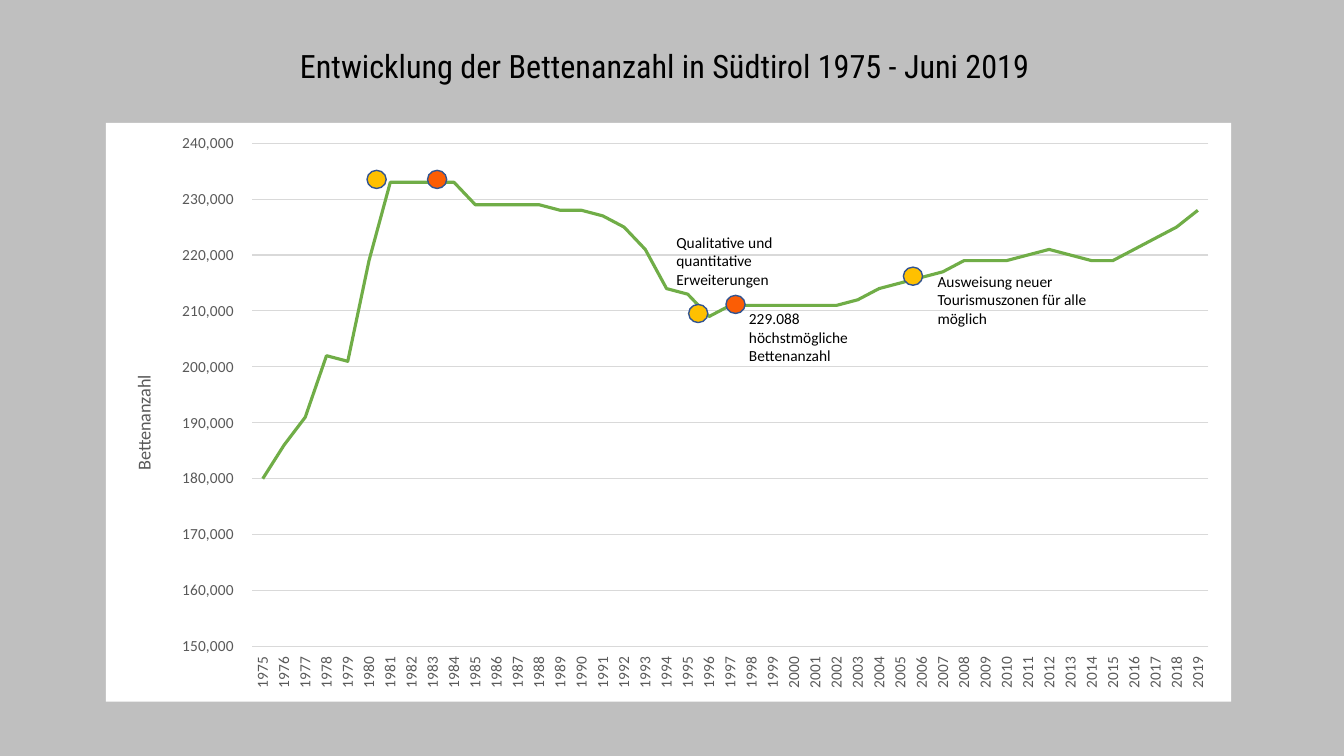
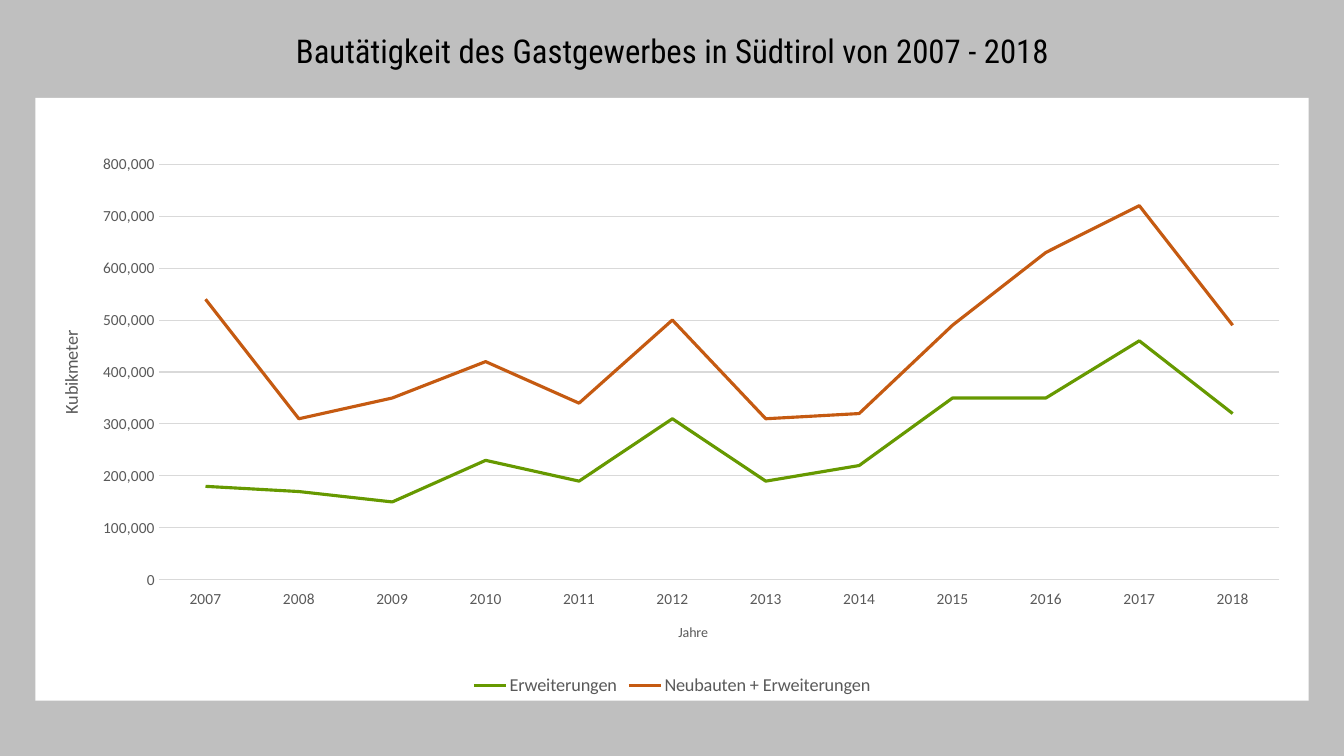
"""Build two slides with line charts on tourism beds and building activity."""
from lxml import etree
from pptx import Presentation
from pptx.chart.data import CategoryChartData
from pptx.dml.color import RGBColor
from pptx.enum.chart import XL_CHART_TYPE as ChartType, XL_LEGEND_POSITION as LegendPosition
from pptx.enum.chart import XL_TICK_LABEL_POSITION as LabelPosition, XL_TICK_MARK as TickMark
from pptx.enum.shapes import MSO_SHAPE as Shape
from pptx.enum.text import MSO_ANCHOR as Anchor, MSO_AUTO_SIZE as AutoSize, PP_ALIGN as Align
from pptx.oxml import parse_xml
from pptx.oxml.ns import nsdecls, qn
from pptx.util import Inches, Pt

BACKGROUND, PANEL, BLACK, GREY, GRID = "BFBFBF", "FFFFFF", "000000", "595959", "D9D9D9"
YELLOW, ORANGE, OUTLINE = "FFC000", "FB5D05", "325491"
TITLE_FONT, BODY_FONT = "Roboto Condensed", "Calibri"
UPRIGHT = "-5400000"

BEDS = {
    "title": "Entwicklung der Bettenanzahl in Südtirol 1975 - Juni 2019",
    "title_at": (0.77, 0.15, 11.66, 1.05),
    "title_size": 23,
    "chart_at": (1.05, 1.22, 11.16, 5.74),
    "plot": (0.13, 0.035, 0.85, 0.87),
    "years": range(1975, 2020),
    "scale": (150000, 240000, 10000),
    "format": r"#,##0\ _€_-",
    "value_title": ("Bettenanzahl", 13, 0.02, 0.43),
    "upright_years": True,
    "series": [("Series 1", "70AD47", [
        180, 186, 191, 202, 201, 219, 233, 233, 233, 233, 229, 229, 229, 229, 228,
        228, 227, 225, 221, 214, 213, 209, 211, 211, 211, 211, 211, 211, 212, 214,
        215, 216, 217, 219, 219, 219, 220, 221, 220, 219, 219, 221, 223, 225, 228])],
}
BUILDING = {
    "title": "Bautätigkeit des Gastgewerbes in Südtirol von 2007 - 2018",
    "title_at": (0.92, 0.03, 11.5, 0.99),
    "title_size": 23.4,
    "chart_at": (0.35, 0.97, 12.63, 5.98),
    "plot": (0.097, 0.11, 0.88, 0.69),
    "years": range(2007, 2019),
    "scale": (0, 800000, 100000),
    "format": "#,##0",
    "value_title": ("Kubikmeter", 13, 0.016, 0.38),
    "year_title": ("Jahre", 10, 0.503, 0.867),
    "legend": True,
    "series": [
        ("Erweiterungen", "669900",
         [180, 170, 150, 230, 190, 310, 190, 220, 350, 350, 460, 320]),
        ("Neubauten + Erweiterungen", "C55A11",
         [540, 310, 350, 420, 340, 500, 310, 320, 490, 630, 720, 490])],
}
DOT_SIZE = (0.19, 0.18)
DOTS = [(3.64, 1.69, YELLOW), (4.24, 1.69, ORANGE), (6.83, 3.02, YELLOW),
        (7.2, 2.93, ORANGE), (8.96, 2.65, YELLOW)]
NOTES = [
    ("Qualitative und quantitative Erweiterungen", (6.61, 2.26, 1.29, 0.71)),
    ("229.088 höchstmögliche Bettenanzahl", (7.33, 3.02, 1.36, 0.68)),
    ("Ausweisung neuer Tourismuszonen für alle möglich", (9.2, 2.65, 1.72, 0.68)),
]


def color(value):
    return RGBColor.from_string(value)


def inches(values):
    return [Inches(value) for value in values]


def set_font(font, size, value, name=BODY_FONT):
    font.size, font.name, font.bold = Pt(size), name, False
    font.color.rgb = color(value)


def set_line(line, value, width):
    line.color.rgb, line.width = color(value), Pt(width)


def add_layout(parent, index, keys, shares, inner=False):
    """Place a chart part by shares of the chart's size."""
    for old in parent.findall(qn("c:layout")):
        parent.remove(old)
    layout = parse_xml(f"<c:layout {nsdecls('c')}><c:manualLayout/></c:layout>")
    settings = [("layoutTarget", "inner")] if inner else []
    settings += [("xMode", "edge"), ("yMode", "edge"), *zip(keys, shares)]
    for key, value in settings:
        etree.SubElement(layout[0], qn(f"c:{key}")).set("val", str(value))
    parent.insert(index, layout)


def add_axis_title(axis, text, size, left, top, upright):
    title = axis.axis_title
    title.text_frame.text = text
    set_font(title.text_frame.paragraphs[0].font, size, GREY)
    if upright:
        body = title.text_frame._txBody.bodyPr
        body.set("rot", UPRIGHT)
        body.set("vert", "horz")
    add_layout(title._element, 1, "xy", (left, top))


def style_axes(chart, content):
    years, values = chart.category_axis, chart.value_axis
    for axis in (years, values):
        axis.major_tick_mark = axis.minor_tick_mark = TickMark.NONE
        set_font(axis.tick_labels.font, 11, GREY)
    years.tick_label_position = LabelPosition.LOW
    set_line(years.format.line, GRID, 0.75)
    values.format.line.fill.background()
    values.minimum_scale, values.maximum_scale, values.major_unit = content["scale"]
    values.tick_labels.number_format = content["format"]
    values.tick_labels.number_format_is_linked = False
    set_line(values.major_gridlines.format.line, GRID, 0.75)
    add_axis_title(values, *content["value_title"], upright=True)
    if "year_title" in content:
        add_axis_title(years, *content["year_title"], upright=False)
    if content.get("upright_years"):
        body = years._element.find(qn("c:txPr")).find(qn("a:bodyPr"))
        body.set("rot", UPRIGHT)
        body.set("vert", "horz")


def add_line_chart(page, content):
    data = CategoryChartData()
    data.categories = [str(year) for year in content["years"]]
    for name, _, thousands in content["series"]:
        data.add_series(name, [value * 1000 for value in thousands])
    chart = page.shapes.add_chart(ChartType.LINE, *inches(content["chart_at"]), data).chart
    chart.has_title = False
    set_font(chart.font, 10, BLACK)
    chart._chartSpace.find(qn("c:chart")).addnext(parse_xml(
        f'<c:spPr {nsdecls("c", "a")}><a:solidFill><a:srgbClr val="{PANEL}"/></a:solidFill>'
        "<a:ln><a:noFill/></a:ln></c:spPr>"))
    plot = chart.plots[0]
    plot.vary_by_categories = False
    add_layout(plot._element.getparent(), 0, "xywh", content["plot"], inner=True)
    for series, (_, value, _) in zip(plot.series, content["series"]):
        series.smooth = False
        set_line(series.format.line, value, 2.25)
    style_axes(chart, content)
    chart.has_legend = content.get("legend", False)
    if chart.has_legend:
        chart.legend.position = LegendPosition.BOTTOM
        chart.legend.include_in_layout = False
        set_font(chart.legend.font, 13, GREY)


def add_page(deck, content):
    page = deck.slides.add_slide(deck.slide_layouts[5])
    title = page.shapes.title
    title.left, title.top, title.width, title.height = inches(content["title_at"])
    frame = title.text_frame
    frame.text = content["title"]
    frame.auto_size, frame.vertical_anchor = AutoSize.NONE, Anchor.MIDDLE
    para = frame.paragraphs[0]
    para.alignment, para.line_spacing = Align.CENTER, 0.9
    set_font(para.font, content["title_size"], BLACK, TITLE_FONT)
    add_line_chart(page, content)
    return page


def add_dot(page, left, top, fill):
    dot = page.shapes.add_shape(Shape.FLOWCHART_CONNECTOR, *inches((left, top, *DOT_SIZE)))
    dot.shadow.inherit = False
    dot.fill.solid()
    dot.fill.fore_color.rgb = color(fill)
    set_line(dot.line, OUTLINE, 1)


def add_note(page, text, place):
    frame = page.shapes.add_textbox(*inches(place)).text_frame
    frame.word_wrap = True
    frame.text = text
    set_font(frame.paragraphs[0].font, 11, BLACK)


def main():
    deck = Presentation()
    deck.slide_width, deck.slide_height = Inches(13.33), Inches(7.5)
    fill = deck.slide_master.background.fill
    fill.solid()
    fill.fore_color.rgb = color(BACKGROUND)
    beds_page = add_page(deck, BEDS)
    for dot in DOTS:
        add_dot(beds_page, *dot)
    for note in NOTES:
        add_note(beds_page, *note)
    add_page(deck, BUILDING)
    deck.save("out.pptx")


if __name__ == "__main__":
    main()
